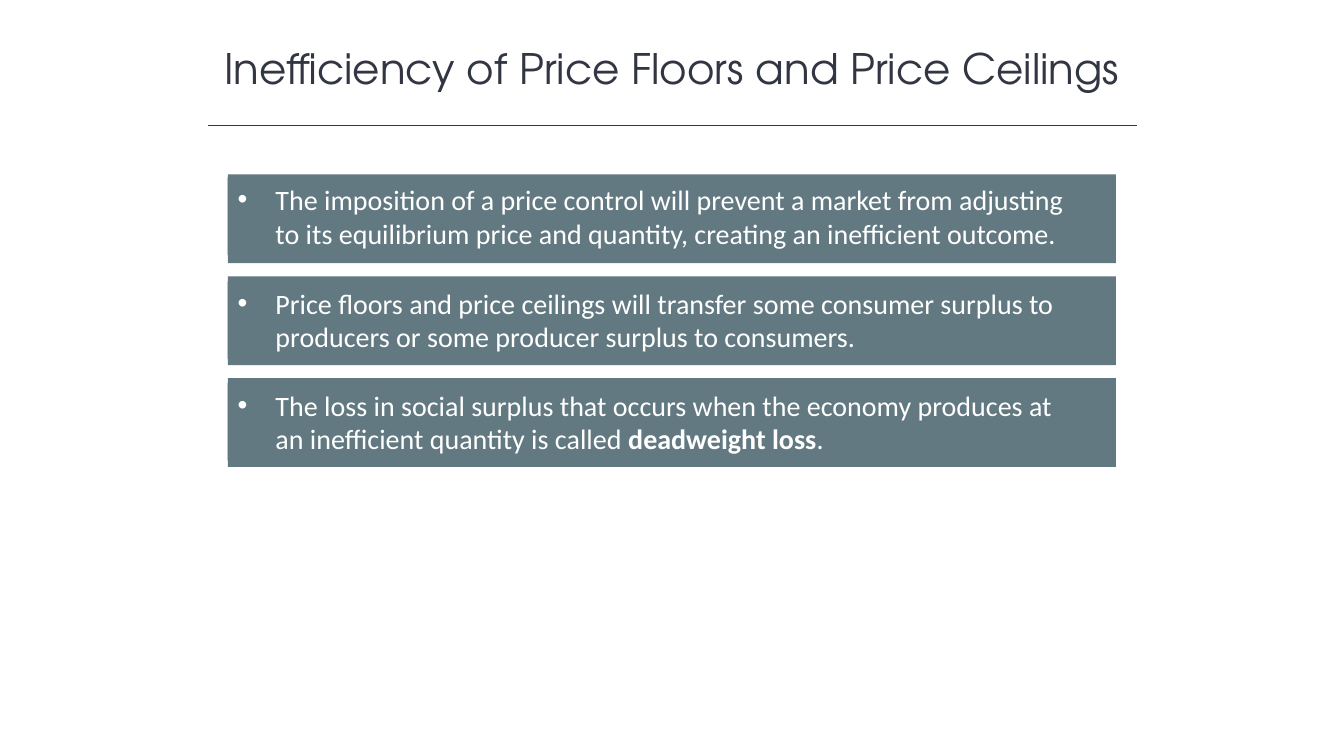
"""Build the slide on the inefficiency of price floors and price ceilings."""
from dataclasses import dataclass

from lxml.etree import SubElement
from pptx import Presentation
from pptx.dml.color import RGBColor
from pptx.enum.shapes import MSO_CONNECTOR, MSO_SHAPE
from pptx.enum.text import MSO_ANCHOR, MSO_AUTO_SIZE, PP_ALIGN
from pptx.oxml.ns import qn
from pptx.shapes.autoshape import Shape
from pptx.shapes.group import GroupShape
from pptx.slide import Slide
from pptx.text.text import _Paragraph, _Run
from pptx.util import Pt

INK = "323542"
SLATE = "627981"
WHITE = "FFFFFF"
BAND_LEFT, BAND_TOP, BAND_PITCH = 162.7, 124.6, 72.75
BAND_WIDTH, BAND_HEIGHT = 634.3, 63.4
TEXT_WIDTH, TEXT_HEIGHT = 614.9, 55.4
INDENT = 27


@dataclass(frozen=True)
class Point:
    text: str
    inset: float = 3.6
    term: str = ""
    ending: str = ""


POINTS = (
    Point("The imposition of a price control will prevent a market from adjusting "
          "to its equilibrium price and quantity, creating an inefficient outcome.", 2.2),
    Point("Price floors and price ceilings will transfer some consumer surplus to "
          "producers or some producer surplus to consumers."),
    Point("The loss in social surplus that occurs when the economy produces at "
          "an inefficient quantity is called ", term="deadweight loss", ending="."),
)


def color(value: str) -> RGBColor:
    return RGBColor.from_string(value)


def style_run(r: _Run, font: str, size: float, ink: str) -> None:
    r.font.name = font
    r.font.size = Pt(size)
    r.font.color.rgb = color(ink)


def add_bullet(p: _Paragraph) -> None:
    pPr = p._p.get_or_add_pPr()
    pPr.set("marL", str(Pt(INDENT)))
    pPr.set("indent", str(Pt(-INDENT)))
    SubElement(pPr, qn("a:buFont")).set("typeface", "Arial")
    SubElement(pPr, qn("a:buChar")).set("char", "•")


def add_title(s: Slide, text: str) -> None:
    sp = s.shapes.add_textbox(Pt(120), Pt(26.6), Pt(720), Pt(43.9))
    tf = sp.text_frame
    tf.word_wrap = True
    tf.auto_size = MSO_AUTO_SIZE.SHAPE_TO_FIT_TEXT
    tf.text = text
    p = tf.paragraphs[0]
    p.alignment = PP_ALIGN.CENTER
    style_run(p.runs[0], "TeX Gyre Adventor", 30, INK)


def add_rule(s: Slide) -> None:
    line = s.shapes.add_connector(
        MSO_CONNECTOR.STRAIGHT, Pt(148.5), Pt(89.5), Pt(812.3), Pt(89.5))
    line.line.color.rgb = color(INK)
    line.line.width = Pt(1)
    SubElement(line._element.spPr, qn("a:effectLst"))


def add_box(group: GroupShape, top: float, width: float, height: float) -> Shape:
    sp = group.shapes.add_shape(
        MSO_SHAPE.RECTANGLE, Pt(BAND_LEFT), Pt(top), Pt(width), Pt(height))
    sp.shadow.inherit = False
    sp.fill.solid()
    sp.fill.fore_color.rgb = color(SLATE)
    sp.line.fill.background()
    return sp


def add_point(s: Slide, point: Point, top: float) -> None:
    group = s.shapes.add_group_shape()
    add_box(group, top, BAND_WIDTH, BAND_HEIGHT)
    tf = add_box(group, top + point.inset, TEXT_WIDTH, TEXT_HEIGHT).text_frame
    tf.word_wrap = True
    tf.auto_size = MSO_AUTO_SIZE.SHAPE_TO_FIT_TEXT
    tf.vertical_anchor = MSO_ANCHOR.TOP
    tf.text = point.text
    p = tf.paragraphs[0]
    p.alignment = PP_ALIGN.LEFT
    add_bullet(p)
    if point.term:
        r = p.add_run()
        r.text = point.term
        r.font.bold = True
        p.add_run().text = point.ending
    for r in p.runs:
        style_run(r, "Calibri", 20, WHITE)


def main() -> None:
    prs = Presentation()
    prs.slide_width, prs.slide_height = Pt(960), Pt(540)
    s = prs.slides.add_slide(prs.slide_layouts[6])
    add_title(s, "Inefficiency of Price Floors and Price Ceilings")
    add_rule(s)
    for i, point in enumerate(POINTS):
        add_point(s, point, BAND_TOP + i * BAND_PITCH)
    prs.save("out.pptx")


if __name__ == "__main__":
    main()
